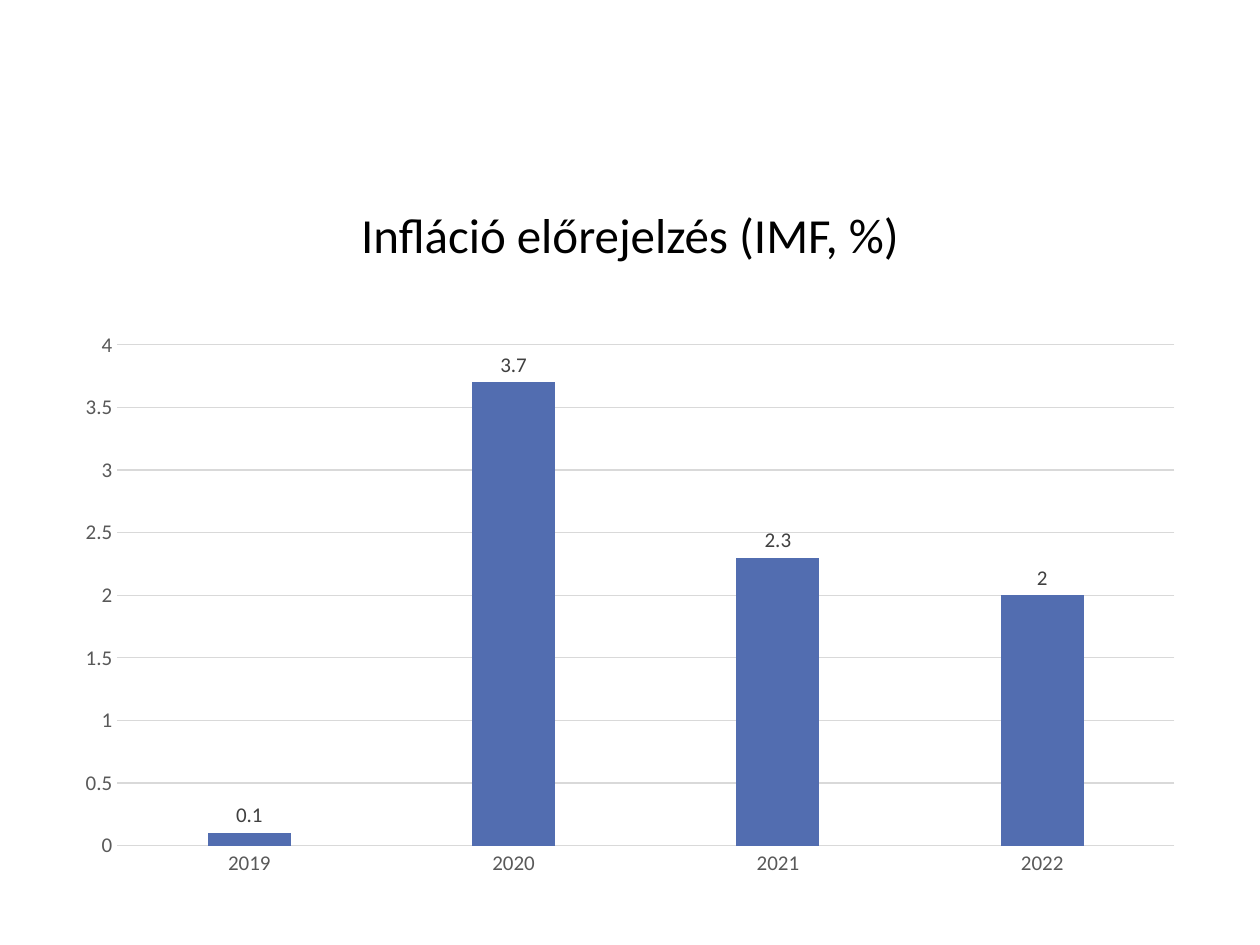
from dataclasses import dataclass

from pptx import Presentation
from pptx.chart.data import CategoryChartData
from pptx.dml.color import RGBColor
from pptx.enum.chart import XL_CHART_TYPE as Chart, XL_LABEL_POSITION as LabelPos, XL_TICK_MARK as Tick
from pptx.enum.text import MSO_ANCHOR as Anchor, PP_ALIGN as Align
from pptx.util import Emu, Pt

PX = 914400 // 126


@dataclass(frozen=True)
class Theme:
    """Colours and type sizes of the slide."""
    face: str = "Calibri"
    title: str = "000000"
    bar: str = "526DB0"
    axis: str = "595959"
    label: str = "404040"
    grid: str = "D9D9D9"
    title_size: int = 28
    chart_size: int = 10
    label_size: int = 12
    line_width: float = 0.75


THEME = Theme()


def px(*lengths):
    """Turn whole pixels into EMU."""
    return [Emu(n * PX) for n in lengths]


def style_font(font, size, color):
    """Set face, size and colour."""
    font.name = THEME.face
    font.size = Pt(size)
    font.bold = False
    font.color.rgb = RGBColor.from_string(color)


def style_line(line):
    """Give a chart line the grid colour and width."""
    line.color.rgb = RGBColor.from_string(THEME.grid)
    line.width = Pt(THEME.line_width)


def add_title(s, text, box):
    """Add the centred heading."""
    tf = s.shapes.add_textbox(*px(*box)).text_frame
    tf.word_wrap = True
    tf.vertical_anchor = Anchor.MIDDLE
    tf.text = text
    p = tf.paragraphs[0]
    p.alignment = Align.CENTER
    style_font(p.runs[0].font, THEME.title_size, THEME.title)


def style_axis(axis):
    """Remove tick marks and set the axis type."""
    axis.major_tick_mark = axis.minor_tick_mark = Tick.NONE
    style_font(axis.tick_labels.font, THEME.label_size, THEME.axis)


def add_column_chart(s, categories, values, box):
    """Add the column chart with value labels."""
    data = CategoryChartData()
    data.categories = categories
    data.add_series("Series 1", values)
    chart = s.shapes.add_chart(Chart.COLUMN_CLUSTERED, *px(*box), data).chart
    chart.has_title = chart.has_legend = False
    style_font(chart.font, THEME.chart_size, THEME.title)

    style_axis(chart.category_axis)
    style_line(chart.category_axis.format.line)
    value_axis = chart.value_axis
    style_axis(value_axis)
    value_axis.minimum_scale, value_axis.maximum_scale = 0, 4
    value_axis.major_unit = 0.5
    value_axis.format.line.fill.background()
    style_line(value_axis.major_gridlines.format.line)

    plot = chart.plots[0]
    plot.vary_by_categories = False
    plot.gap_width, plot.overlap = 219, -27
    series = plot.series[0]
    series.format.fill.solid()
    series.format.fill.fore_color.rgb = RGBColor.from_string(THEME.bar)
    labels = series.data_labels
    labels.show_value = True
    labels.position = LabelPos.OUTSIDE_END
    style_font(labels.font, THEME.label_size, THEME.label)


def main():
    """Build and save the slide."""
    prs = Presentation()
    prs.slide_width, prs.slide_height = px(1260, 945)
    s = prs.slides.add_slide(prs.slide_layouts[6])
    add_title(s, "Infláció előrejelzés (IMF, %)", (63, 186, 1134, 96))
    add_column_chart(s, ["2019", "2020", "2021", "2022"], [0.1, 3.7, 2.3, 2], (63, 321, 1134, 566))
    prs.save("out.pptx")


if __name__ == "__main__":
    main()
